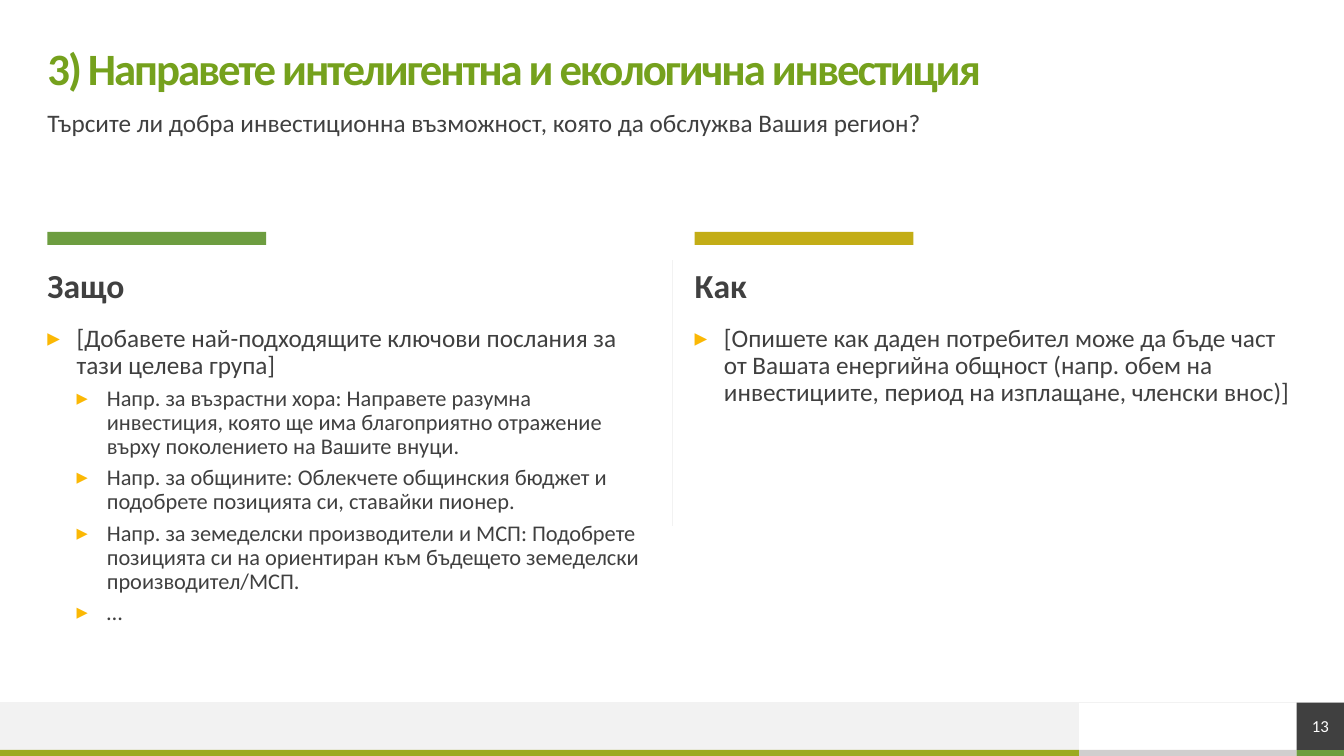
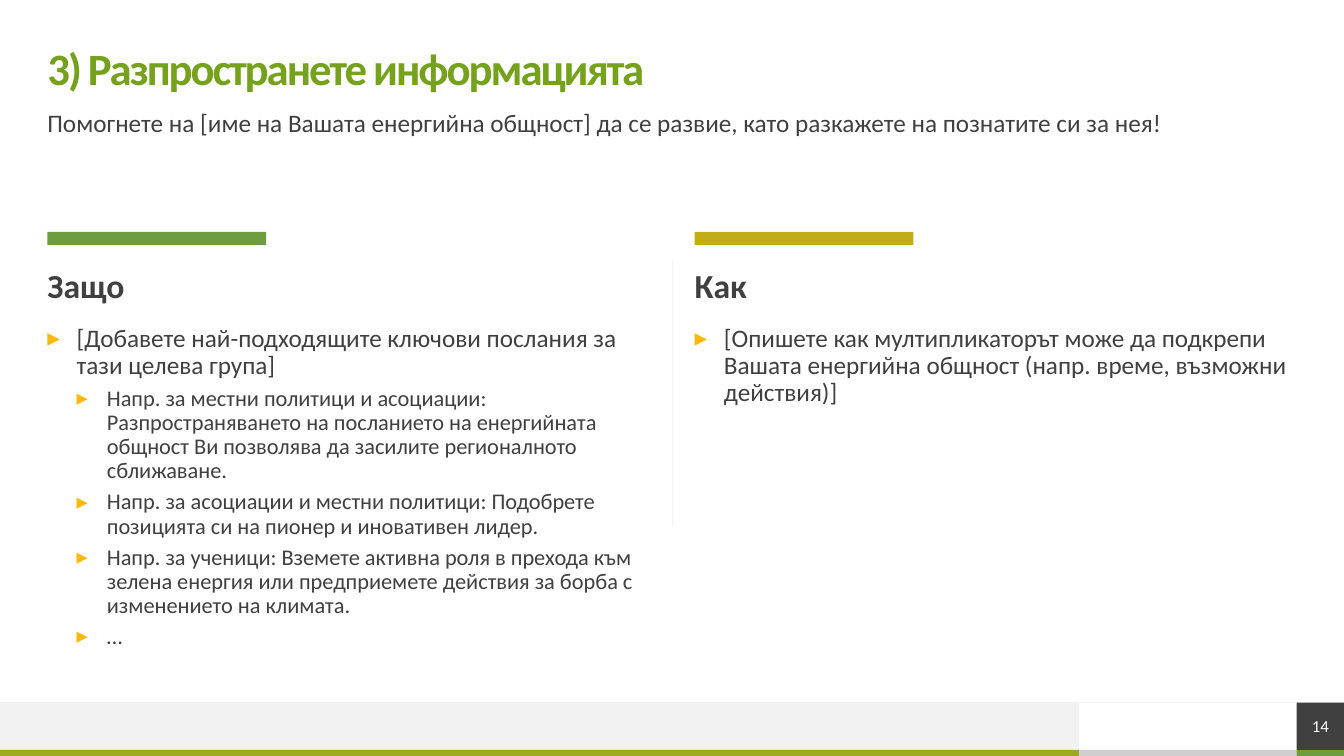
from dataclasses import dataclass
from typing import Optional

from lxml.etree import SubElement
from pptx import Presentation
from pptx.dml.color import RGBColor
from pptx.enum.shapes import MSO_CONNECTOR as Connector, MSO_SHAPE as Preset
from pptx.enum.text import MSO_ANCHOR as Anchor, MSO_AUTO_SIZE as AutoSize, PP_ALIGN as Align
from pptx.oxml.ns import qn
from pptx.util import Inches, Pt

# Shared style
FONT = "Calibri"
TITLE_GREEN = RGBColor(0x75, 0xA1, 0x1D)
LEAF_GREEN = RGBColor(0x6D, 0x9D, 0x40)
OLIVE = RGBColor(0x9C, 0xAA, 0x20)
MUSTARD = RGBColor(0xC3, 0xAD, 0x16)
BULLET_YELLOW = RGBColor(0xFB, 0xB8, 0x04)
DARK_GREY = RGBColor(0x40, 0x40, 0x40)
MID_GREY = RGBColor(0xD0, 0xCE, 0xCE)
PALE_GREY = RGBColor(0xF2, 0xF2, 0xF2)
WHITE = RGBColor(0xFF, 0xFF, 0xFF)

# Shared grid, in inches
PAGE_WIDTH, PAGE_HEIGHT = 13.33, 7.5
MARGIN = 0.47
CONTENT_WIDTH = 12.4
COLUMN_WIDTH = 5.98
ACCENT_WIDTH = 2.17
FOOTER_TOP, STRIPE_TOP = 6.97, 7.44
FOOTER_HEIGHT, STRIPE_HEIGHT = 0.47, 0.06
FOOTER_SPLIT, NUMBER_LEFT = 10.7, 12.86
DIVIDER_X = 6.67


@dataclass(frozen=True)
class Box:
    left: float
    top: float
    width: float
    height: float


@dataclass(frozen=True)
class Level:
    size: float
    margin: float
    hanging: float
    space_before: float


@dataclass(frozen=True)
class Column:
    left: float
    accent: RGBColor
    heading: str
    heading_idx: int
    list_idx: int


@dataclass(frozen=True)
class PageContent:
    number: int
    title: str
    subtitle: str
    why: list
    how: list
    why_height: float


LEVELS = (Level(18, 0.29, 0.29, 10), Level(16, 0.59, 0.3, 5))
COLUMNS = (
    Column(MARGIN, LEAF_GREEN, "Защо", 1, 2),
    Column(6.89, MUSTARD, "Как", 3, 4),
)
HOW_HEIGHT = 2.4
FOOTER_BLOCKS = (
    (Box(FOOTER_SPLIT, STRIPE_TOP, NUMBER_LEFT - FOOTER_SPLIT, STRIPE_HEIGHT), MID_GREY),
    (Box(0, FOOTER_TOP, FOOTER_SPLIT, FOOTER_HEIGHT), PALE_GREY),
    (Box(0, STRIPE_TOP, FOOTER_SPLIT, STRIPE_HEIGHT), OLIVE),
    (Box(NUMBER_LEFT, STRIPE_TOP, PAGE_WIDTH - NUMBER_LEFT, STRIPE_HEIGHT), LEAF_GREEN),
)

# Each list entry is (level, text)
KEY_MESSAGES = (0, "[Добавете най-подходящите ключови послания за тази целева група]")
PAGES = (
    PageContent(
        13,
        "3) Направете интелигентна и екологична инвестиция",
        "Търсите ли добра инвестиционна възможност, която да обслужва Вашия регион?",
        [
            KEY_MESSAGES,
            (1, "Напр. за възрастни хора: Направете разумна инвестиция, която ще има "
                "благоприятно отражение върху поколението на Вашите внуци."),
            (1, "Напр. за общините: Облекчете общинския бюджет и подобрете позицията си, "
                "ставайки пионер."),
            (1, "Напр. за земеделски производители и МСП: Подобрете позицията си на "
                "ориентиран към бъдещето земеделски производител/МСП."),
            (1, "…"),
        ],
        [(0, "[Опишете как даден потребител може да бъде част от Вашата енергийна общност "
             "(напр. обем на инвестициите, период на изплащане, членски внос)]")],
        2.83,
    ),
    PageContent(
        14,
        "3) Разпространете информацията",
        "Помогнете на [име на Вашата енергийна общност] да се развие, като разкажете на "
        "познатите си за нея!",
        [
            KEY_MESSAGES,
            (1, "Напр. за местни политици и асоциации: Разпространяването на посланието на "
                "енергийната общност Ви позволява да засилите регионалното сближаване."),
            (1, "Напр. за асоциации и местни политици: Подобрете позицията си на пионер и "
                "иновативен лидер."),
            (1, "Напр. за ученици: Вземете активна роля в прехода към зелена енергия или "
                "предприемете действия за борба с изменението на климата."),
            (1, "…"),
        ],
        [(0, "[Опишете как мултипликаторът може да подкрепи Вашата енергийна общност "
             "(напр. време, възможни действия)]")],
        3.34,
    ),
)


def place(shape, box: Box) -> None:
    shape.left, shape.top = Inches(box.left), Inches(box.top)
    shape.width, shape.height = Inches(box.width), Inches(box.height)


def prepare_frame(shape, anchor: Anchor = Anchor.TOP):
    frame = shape.text_frame
    frame.word_wrap = True
    frame.auto_size = AutoSize.NONE
    frame.vertical_anchor = anchor
    frame.margin_left = frame.margin_top = frame.margin_right = frame.margin_bottom = 0
    return frame


def write(para, text: str, *, size: float, color: RGBColor = DARK_GREY, bold: bool = False,
          align: Align = Align.LEFT, line_spacing: float = 0.9, space_before: float = 0,
          tracking: Optional[float] = None) -> None:
    para.alignment = align
    para.line_spacing = line_spacing
    para.space_before = Pt(space_before)
    span = para.add_run()
    span.text = text
    span.font.name = FONT
    span.font.size = Pt(size)
    span.font.bold = bold
    span.font.color.rgb = color
    if tracking is not None:
        span.font._element.set("spc", str(round(tracking * 100)))


def add_bullet(para, level: Level) -> None:
    properties = para._p.get_or_add_pPr()
    properties.set("marL", str(Inches(level.margin)))
    properties.set("indent", str(-Inches(level.hanging)))
    color = SubElement(properties, qn("a:buClr"))
    SubElement(color, qn("a:srgbClr"), val=str(BULLET_YELLOW))
    SubElement(properties, qn("a:buFont"), typeface="Arial")
    SubElement(properties, qn("a:buChar"), char="▸")


def fill_list(shape, entries: list) -> None:
    frame = prepare_frame(shape)
    for index, (depth, text) in enumerate(entries):
        para = frame.add_paragraph() if index else frame.paragraphs[0]
        para.level = depth
        level = LEVELS[depth]
        add_bullet(para, level)
        write(para, text, size=level.size, space_before=level.space_before if index else 0)


def add_block(page, box: Box, color: RGBColor):
    block = page.shapes.add_shape(Preset.RECTANGLE, 0, 0, 0, 0)
    place(block, box)
    block.shadow.inherit = False
    block.fill.solid()
    block.fill.fore_color.rgb = color
    block.line.fill.background()
    return block


def add_rule(page, x1: float, y1: float, x2: float, y2: float) -> None:
    rule = page.shapes.add_connector(
        Connector.STRAIGHT, Inches(x1), Inches(y1), Inches(x2), Inches(y2))
    rule.line.color.rgb = PALE_GREY
    rule.line.width = Pt(0.5)
    SubElement(rule._element.spPr, qn("a:effectLst"))


def draw_footer(page, number: int) -> None:
    for box, color in FOOTER_BLOCKS:
        add_block(page, box, color)
    add_rule(page, PAGE_WIDTH, FOOTER_TOP, 0, FOOTER_TOP)
    badge = add_block(
        page, Box(NUMBER_LEFT, FOOTER_TOP, PAGE_WIDTH - NUMBER_LEFT, FOOTER_HEIGHT), DARK_GREY)
    write(prepare_frame(badge, Anchor.MIDDLE).paragraphs[0], str(number),
          size=12, color=WHITE, align=Align.CENTER, line_spacing=1.0)


def draw_column(page, column: Column, entries: list, height: float) -> None:
    add_block(page, Box(column.left, 2.3, ACCENT_WIDTH, 0.13), column.accent)
    heading = page.placeholders[column.heading_idx]
    place(heading, Box(column.left, 2.67, COLUMN_WIDTH, 0.39))
    write(prepare_frame(heading).paragraphs[0], column.heading, size=24, bold=True)
    body = page.placeholders[column.list_idx]
    place(body, Box(column.left, 3.23, COLUMN_WIDTH, height))
    fill_list(body, entries)


def draw_page(deck, content: PageContent) -> None:
    page = deck.slides.add_slide(deck.slide_layouts.get_by_name("Comparison"))
    draw_footer(page, content.number)

    # Title and subtitle
    title = page.shapes.title
    place(title, Box(MARGIN, 0.47, CONTENT_WIDTH, 0.47))
    write(prepare_frame(title, Anchor.MIDDLE).paragraphs[0], content.title,
          size=32, color=TITLE_GREEN, bold=True, tracking=-1.5)
    subtitle = page.shapes.add_textbox(0, 0, 0, 0)
    place(subtitle, Box(MARGIN, 1.1, CONTENT_WIDTH, 0.39))
    write(prepare_frame(subtitle).paragraphs[0], content.subtitle, size=18)

    # Two columns with a divider
    add_rule(page, DIVIDER_X, 2.58, DIVIDER_X, 5.22)
    lists = ((content.why, content.why_height), (content.how, HOW_HEIGHT))
    for column, (entries, height) in zip(COLUMNS, lists):
        draw_column(page, column, entries, height)


def main() -> None:
    deck = Presentation()
    deck.slide_width, deck.slide_height = Inches(PAGE_WIDTH), Inches(PAGE_HEIGHT)
    for content in PAGES:
        draw_page(deck, content)
    deck.save("out.pptx")


if __name__ == "__main__":
    main()
